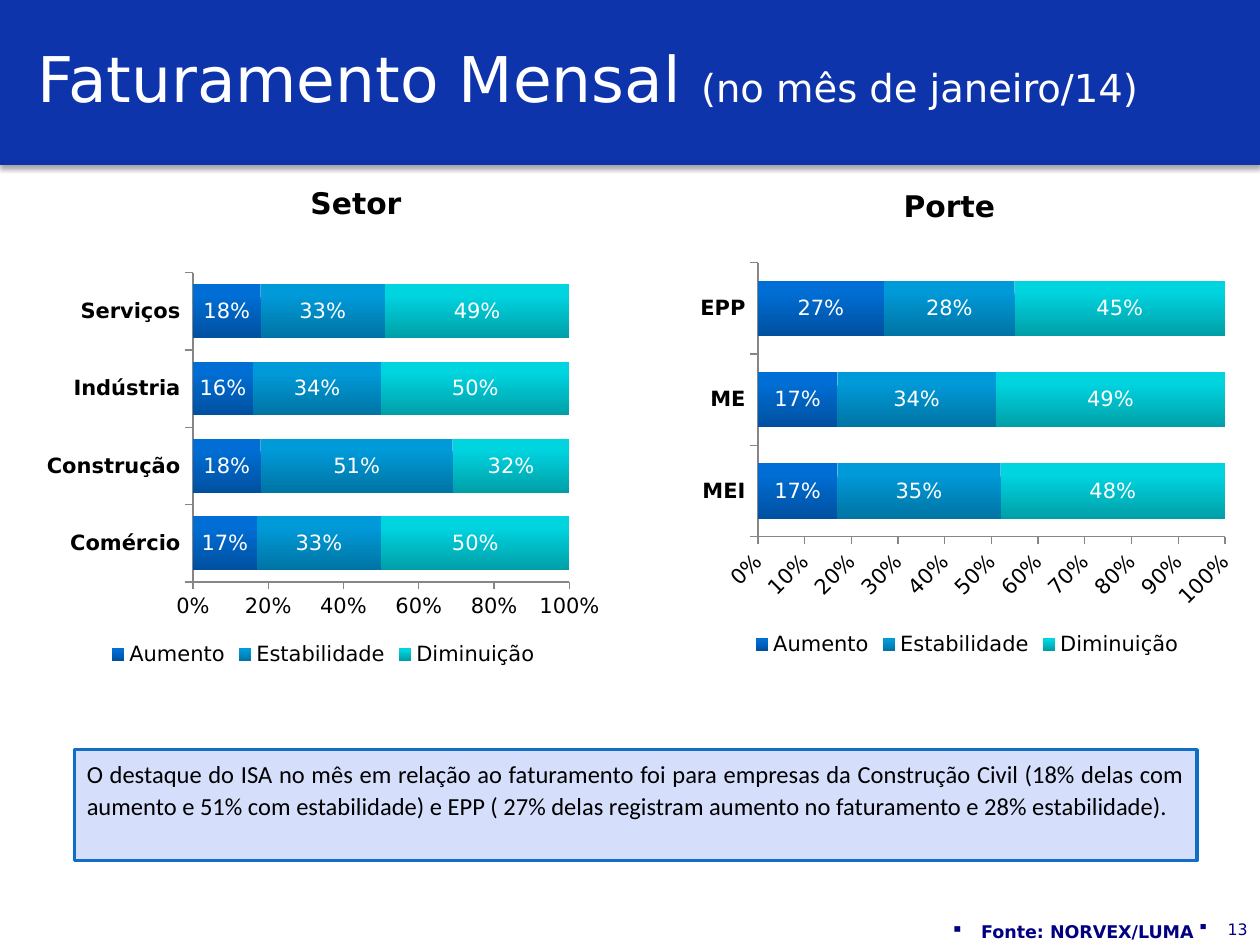
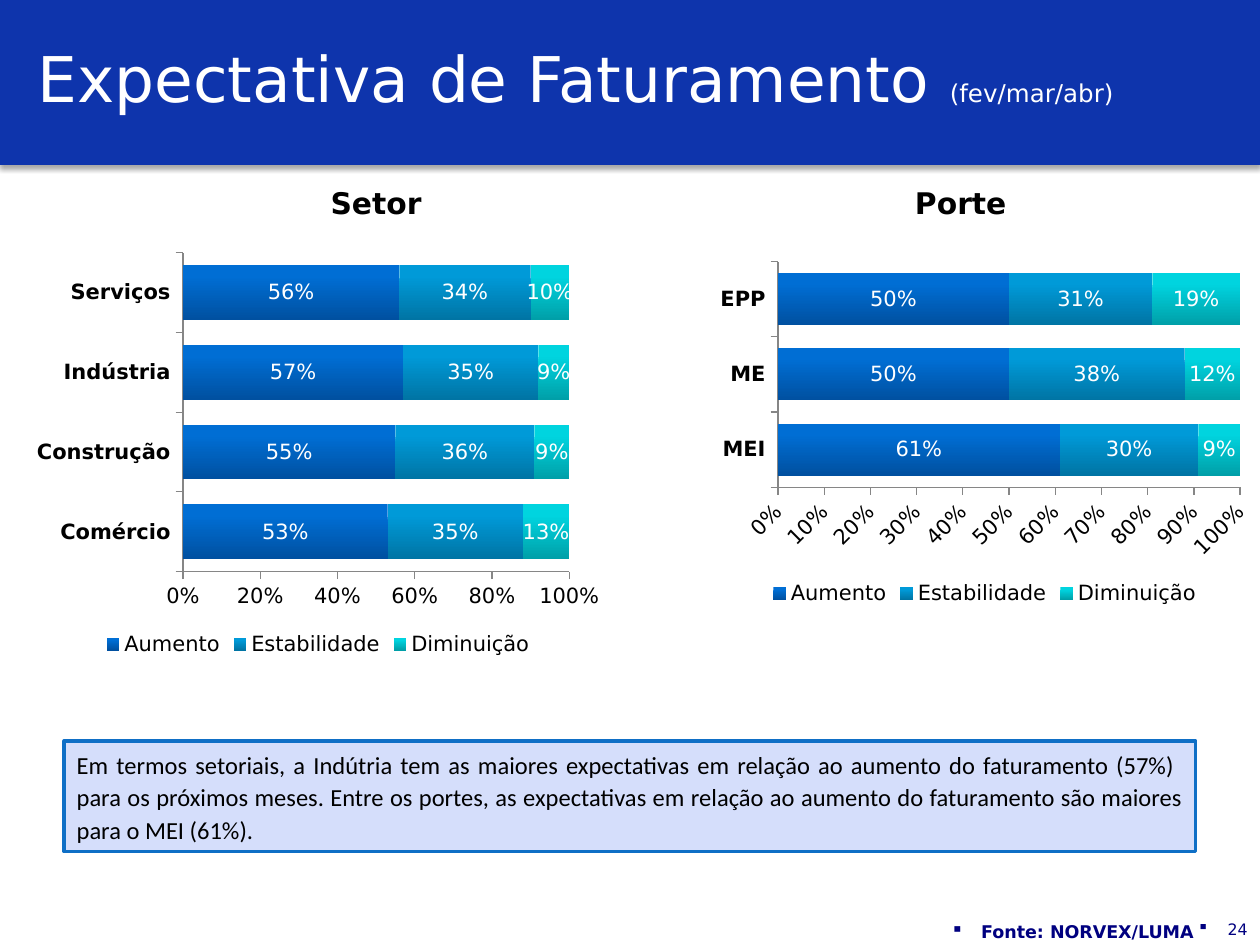
from dataclasses import dataclass

from lxml import etree
from pptx import Presentation
from pptx.chart.data import CategoryChartData
from pptx.dml.color import RGBColor
from pptx.enum.chart import XL_CHART_TYPE, XL_LABEL_POSITION, XL_LEGEND_POSITION, XL_TICK_MARK
from pptx.enum.shapes import MSO_SHAPE
from pptx.enum.text import MSO_ANCHOR, PP_ALIGN
from pptx.oxml import parse_xml
from pptx.oxml.ns import nsdecls, qn
from pptx.util import Inches, Pt

STACKED = XL_CHART_TYPE.BAR_STACKED
CENTER_LABEL = XL_LABEL_POSITION.CENTER
BOTTOM = XL_LEGEND_POSITION.BOTTOM
OUTSIDE = XL_TICK_MARK.OUTSIDE
RECTANGLE = MSO_SHAPE.RECTANGLE
TOP, MIDDLE = MSO_ANCHOR.TOP, MSO_ANCHOR.MIDDLE
LEFT, CENTER, RIGHT, JUSTIFY = PP_ALIGN.LEFT, PP_ALIGN.CENTER, PP_ALIGN.RIGHT, PP_ALIGN.JUSTIFY


@dataclass(frozen=True)
class Theme:
    font: str = "DejaVu Sans"
    body_font: str = "Calibri"
    band: str = "0E34AC"
    white: str = "FFFFFF"
    black: str = "000000"
    navy: str = "000080"
    axis: str = "868686"
    note_fill: str = "D5DEFB"
    note_line: str = "0F6FC6"
    title_size: int = 36
    heading_size: int = 17
    note_size: int = 14
    chart_size: int = 12
    source_size: int = 10
    number_size: int = 9


theme = Theme()

# Series name, gradient top and gradient bottom
SERIES = [
    ("Aumento", "006ED4", "0050A0"),
    ("Estabilidade", "009AD8", "0074A4"),
    ("Diminuição", "00D4DF", "009FA8"),
]
SECTORS = ["Comércio", "Construção", "Indústria", "Serviços"]
SIZES = ["MEI", "ME", "EPP"]

# Content; places are left, top, width, height in grid columns and rows
SLIDES = [
    {
        "title": "Faturamento Mensal ",
        "period": "(no mês de janeiro/14)",
        "period_size": 22,
        "number": "13",
        "note_place": (5.9, 59.5, 89.1, 8.8),
        "note": "O destaque do ISA no mês em relação ao faturamento foi para empresas da "
                "Construção Civil (18% delas com aumento e 51% com estabilidade) e EPP "
                "( 27% delas registram aumento no faturamento e 28% estabilidade). ",
        "charts": [
            {"heading": "Setor", "heading_at": (18.5, 13.9), "place": (2.8, 21, 45.7, 32.3),
             "categories": SECTORS, "gap": 44, "step": 0.2, "turn": 0,
             "values": [(0.17, 0.18, 0.16, 0.18), (0.33, 0.51, 0.34, 0.33),
                        (0.5, 0.32, 0.5, 0.49)]},
            {"heading": "Porte", "heading_at": (65.6, 14.1), "place": (54.7, 20.2, 44.1, 32.3),
             "categories": SIZES, "gap": 65, "step": 0.1, "turn": -45,
             "values": [(0.17, 0.17, 0.27), (0.35, 0.34, 0.28), (0.48, 0.49, 0.45)]},
        ],
    },
    {
        "title": "Expectativa de Faturamento ",
        "period": "(fev/mar/abr)",
        "period_size": 14,
        "number": "24",
        "note_place": (5.1, 58.8, 89.8, 8.8),
        "note": "Em termos setoriais, a Indútria tem as maiores expectativas em relação ao "
                "aumento do faturamento (57%)  para os próximos meses. Entre os portes, as "
                "expectativas em relação ao aumento do faturamento são maiores para o MEI (61%).",
        "charts": [
            {"heading": "Setor", "heading_at": (20.1, 13.9), "place": (2, 19.4, 46.5, 33.1),
             "categories": SECTORS, "gap": 45, "step": 0.2, "turn": 0,
             "values": [(0.53, 0.55, 0.57, 0.56), (0.35, 0.36, 0.35, 0.34),
                        (0.13, 0.09, 0.09, 0.1)]},
            {"heading": "Porte", "heading_at": (66.5, 13.9), "place": (56.3, 20.2, 43.7, 28.3),
             "categories": SIZES, "gap": 45, "step": 0.1, "turn": -45,
             "values": [(0.61, 0.5, 0.5), (0.3, 0.38, 0.31), (0.09, 0.12, 0.19)]},
        ],
    },
]

deck = Presentation()
deck.slide_width, deck.slide_height = Inches(10), Inches(7.5)
COLUMN, ROW = deck.slide_width / 100, deck.slide_height / 75


def grid(left, top, width, height):
    return [round(n * unit) for n, unit in
            zip((left, top, width, height), (COLUMN, ROW, COLUMN, ROW))]


def write(box, text, size, color, align=LEFT, bold=False, font=theme.font, anchor=TOP):
    frame = box.text_frame
    frame.word_wrap = True
    frame.vertical_anchor = anchor
    para = frame.paragraphs[0]
    para.alignment = align
    para.font.name, para.font.size, para.font.bold = font, Pt(size), bold
    para.font.color.rgb = RGBColor.from_string(color)
    para.add_run().text = text
    return para


for content in SLIDES:
    page = deck.slides.add_slide(deck.slide_layouts[6])

    # Title band with a soft shadow below
    band = page.shapes.add_shape(RECTANGLE, *grid(0, 0, 100, 13.1))
    band.fill.solid()
    band.fill.fore_color.rgb = RGBColor.from_string(theme.band)
    band.line.fill.background()
    band.shadow.inherit = False
    effects = band.fill._xPr.find(qn("a:effectLst"))
    effects.append(parse_xml(
        f'<a:outerShdw {nsdecls("a")} blurRad="{Pt(3.1)}" dist="{Pt(1.8)}" dir="5400000" '
        f'rotWithShape="0"><a:srgbClr val="{theme.black}"><a:alpha val="35000"/>'
        '</a:srgbClr></a:outerShdw>'))

    # Title and its period
    box = page.shapes.add_textbox(*grid(2, 0.8, 96.9, 10.7))
    para = write(box, content["title"], theme.title_size, theme.white, anchor=MIDDLE)
    span = para.add_run()
    span.text = content["period"]
    span.font.size = Pt(content["period_size"])

    # Chart headings
    for item in content["charts"]:
        box = page.shapes.add_textbox(*grid(*item["heading_at"], 19.5, 3.9))
        para = write(box, item["heading"], theme.heading_size, theme.black, CENTER, True)
        para.line_spacing = 1.1

    # Commentary
    note = page.shapes.add_shape(RECTANGLE, *grid(*content["note_place"]))
    note.shadow.inherit = False
    note.fill.solid()
    note.fill.fore_color.rgb = RGBColor.from_string(theme.note_fill)
    note.line.color.rgb = RGBColor.from_string(theme.note_line)
    note.line.width = Pt(2)
    para = write(note, content["note"], theme.note_size, theme.black, JUSTIFY,
                 font=theme.body_font)
    para.line_spacing = 1.1

    # Page number and source, each with a small square bullet
    for text, place, size, bold in [
        (content["number"], (88.1, 72.5, 11.9, 2.5), theme.number_size, False),
        ("Fonte: NORVEX/LUMA", (46.9, 72.6, 48.8, 2.4), theme.source_size, True),
    ]:
        box = page.shapes.add_textbox(*grid(*place))
        para = write(box, text, size, theme.navy, RIGHT, bold)
        para.space_before = Pt(2)
        properties = para._p.get_or_add_pPr()
        properties.set("marL", str(Inches(0.24)))
        properties.set("indent", str(-Inches(0.24)))
        bullet = etree.Element(qn("a:buChar"), char="▪")
        properties.find(qn("a:spcBef")).addnext(bullet)

    # Stacked bar charts
    for item in content["charts"]:
        data = CategoryChartData(number_format="0%")
        data.categories = item["categories"]
        for (name, _, _), values in zip(SERIES, item["values"]):
            data.add_series(name, values)
        chart = page.shapes.add_chart(STACKED, *grid(*item["place"]), data).chart
        chart.has_title = False
        chart.font.name, chart.font.size = theme.font, Pt(theme.chart_size)
        chart.font.color.rgb = RGBColor.from_string(theme.black)
        chart.has_legend = True
        chart.legend.position = BOTTOM
        chart.legend.include_in_layout = False

        for axis in (chart.category_axis, chart.value_axis):
            axis.has_major_gridlines = False
            axis.major_tick_mark = OUTSIDE
            axis.format.line.color.rgb = RGBColor.from_string(theme.axis)
        chart.category_axis.tick_labels.font.bold = True
        scale = chart.value_axis
        scale.minimum_scale, scale.maximum_scale = 0, 1
        scale.major_unit = item["step"]
        scale.tick_labels.number_format = "0%"
        scale.tick_labels.number_format_is_linked = False
        scale.tick_labels.font.bold = False
        if item["turn"]:
            turned = scale._element.find(qn("c:txPr")).find(qn("a:bodyPr"))
            turned.set("rot", str(item["turn"] * 60000))
            turned.set("vert", "horz")

        plot = chart.plots[0]
        plot.gap_width, plot.overlap = item["gap"], 100
        plot.vary_by_categories = False
        for series, (_, upper, lower) in zip(plot.series, SERIES):
            fill = series.format.fill
            fill.gradient()
            fill.gradient_angle = 270
            for stop, color, position in zip(fill.gradient_stops, (upper, lower), (0.2, 1)):
                stop.color.rgb = RGBColor.from_string(color)
                stop.position = position
            labels = series.data_labels
            labels.show_value = True
            labels.position = CENTER_LABEL
            labels.number_format = "0%"
            labels.number_format_is_linked = False
            labels.font.color.rgb = RGBColor.from_string(theme.white)

deck.save("out.pptx")
